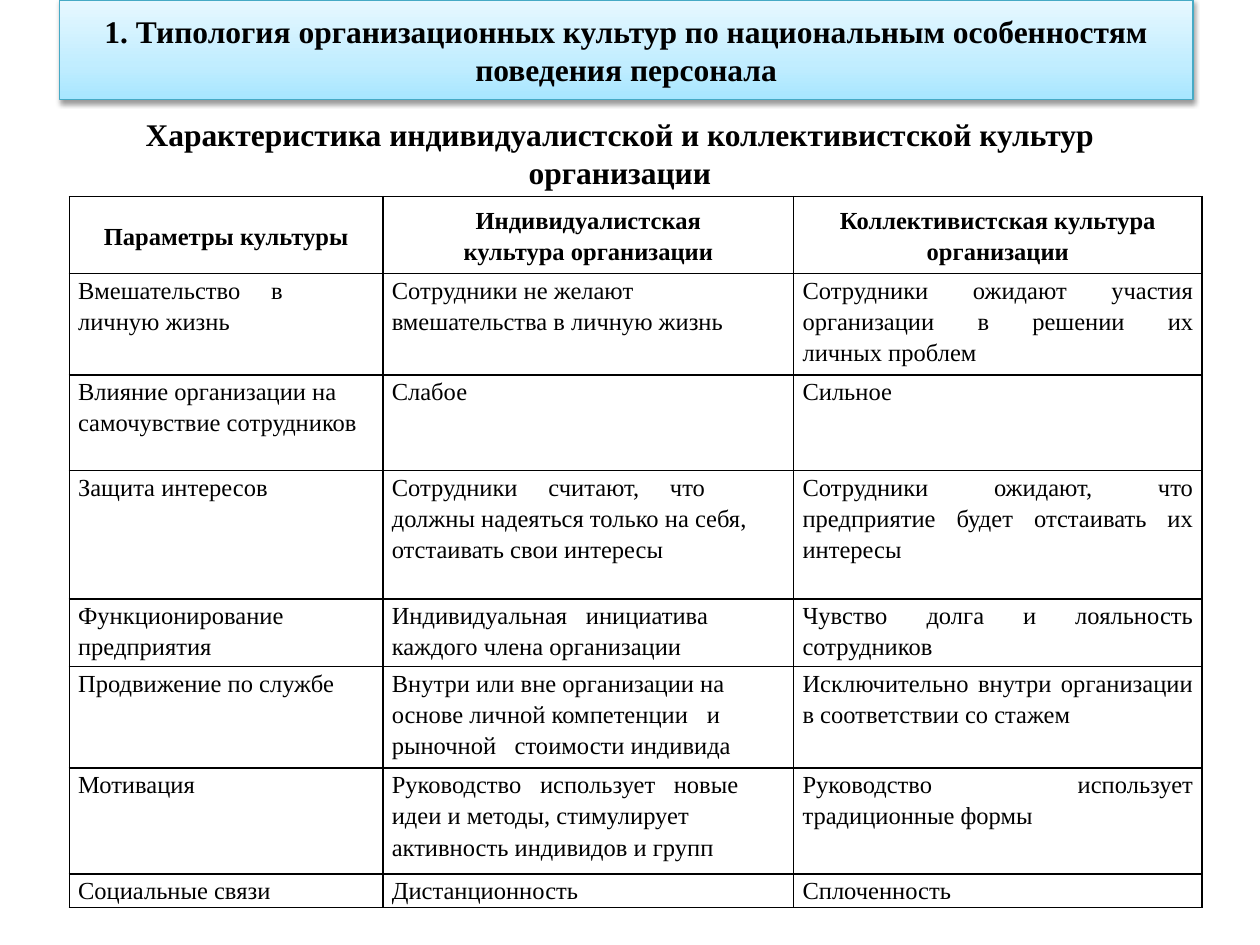
from copy import deepcopy
from dataclasses import dataclass

from lxml import etree
from pptx import Presentation
from pptx import util as u
from pptx.dml.color import RGBColor
from pptx.enum import text
from pptx.enum.shapes import MSO_SHAPE
from pptx.oxml.ns import qn


@dataclass(frozen=True)
class Theme:
    font: str = "Times New Roman"
    ink: str = "000000"
    banner_line: str = "46AAC5"
    banner_stops: tuple = ((0, "A7E6FF"), (0.35, "C1EDFF"), (1, "E7F8FF"))
    heading_size: int = 18
    table_size: int = 14
    table_leading: float = 1.15


THEME = Theme()
CENTER, JUSTIFY, LEFT = (
    text.PP_ALIGN.CENTER, text.PP_ALIGN.JUSTIFY, text.PP_ALIGN.LEFT)
GAP_MARKS = {"_": 14, "^": 7}
COLUMN_WIDTHS = (2.49, 3.26, 3.24)
ROW_HEIGHTS = (0.61, 0.76, 0.76, 1.02, 0.51, 0.76, 0.84, 0.25)
ROWS = (
    (("Параметры культуры",),
     ("Индивидуалистская", "культура организации"),
     ("Коллективистская культура организации",)),
    (("Вмешательство_в_личную жизнь",),
     ("Сотрудники не желают вмешательства в личную жизнь",),
     ("Сотрудники ожидают участия организации^в^решении^их личных проблем",)),
    (("Влияние организации на самочувствие сотрудников",),
     ("Слабое",),
     ("Сильное",)),
    (("Защита интересов",),
     ("Сотрудники_считают,_что должны надеяться только на себя, "
      "отстаивать свои интересы",),
     ("Сотрудники ожидают, что предприятие будет отстаивать их интересы",)),
    (("Функционирование^предприятия",),
     ("Индивидуальная^инициатива каждого члена организации",),
     ("Чувство долга и лояльность сотрудников",)),
    (("Продвижение по службе",),
     ("Внутри или вне организации на основе личной "
      "компетенции^и^рыночной^стоимости индивида",),
     ("Исключительно внутри организации в соответствии со стажем",)),
    (("Мотивация",),
     ("Руководство^использует^новые идеи и методы, стимулирует "
      "активность индивидов и групп",),
     ("Руководство использует традиционные формы",)),
    (("Социальные связи",), ("Дистанционность",), ("Сплоченность",)),
)


def add_run(paragraph, words, size, bold, spacing=0):
    run = paragraph.add_run()
    run.text = words
    run.font.name = THEME.font
    run.font.size = u.Pt(size)
    run.font.bold = bold
    run.font.color.rgb = RGBColor.from_string(THEME.ink)
    if spacing:
        run.font._element.set("spc", str(spacing * 100))


def add_spaced_text(paragraph, line, size, bold):
    words = ""
    for character in line:
        if character in GAP_MARKS:
            add_run(paragraph, words, size, bold)
            add_run(paragraph, " ", size, bold, GAP_MARKS[character])
            words = ""
        else:
            words += character
    add_run(paragraph, words, size, bold)


def fill_frame(frame, lines, size, bold, alignment, leading=None):
    frame.word_wrap = True
    for index, line in enumerate(lines):
        paragraph = frame.add_paragraph() if index else frame.paragraphs[0]
        paragraph.alignment = alignment
        if leading:
            paragraph.line_spacing = leading
        add_spaced_text(paragraph, line, size, bold)


def add_solid_fill(parent, color):
    solid = etree.SubElement(parent, qn("a:solidFill"))
    return etree.SubElement(solid, qn("a:srgbClr"), val=color)


def add_banner(slide, left, top, width, height):
    banner = slide.shapes.add_shape(
        MSO_SHAPE.RECTANGLE, left, top, width, height)
    banner.fill.gradient()
    banner.fill.gradient_angle = 90
    properties = banner._element.spPr
    stops = properties.find(".//" + qn("a:gsLst"))
    stops.insert(1, deepcopy(stops[0]))
    for stop, (position, color) in zip(
            banner.fill.gradient_stops, THEME.banner_stops):
        stop.position = position
        stop.color.rgb = RGBColor.from_string(color)
    banner.line.color.rgb = RGBColor.from_string(THEME.banner_line)
    banner.line.width = u.Pt(0.75)
    banner.shadow.inherit = False
    shadow = etree.SubElement(
        properties.find(qn("a:effectLst")), qn("a:outerShdw"),
        blurRad="40000", dist="20000", dir="5400000", rotWithShape="0")
    color = etree.SubElement(shadow, qn("a:srgbClr"), val=THEME.ink)
    etree.SubElement(color, qn("a:alpha"), val="38000")
    banner.text_frame.vertical_anchor = text.MSO_ANCHOR.MIDDLE
    fill_frame(
        banner.text_frame,
        ("1. Типология организационных культур по национальным "
         "особенностям поведения персонала",),
        THEME.heading_size, True, CENTER)


def add_subtitle(slide, left, top, width, height):
    subtitle = slide.shapes.add_textbox(left, top, width, height)
    frame = subtitle.text_frame
    frame.vertical_anchor = text.MSO_ANCHOR.MIDDLE
    fill_frame(
        frame,
        ("Характеристика индивидуалистской и коллективистской культур",
         "организации"),
        THEME.heading_size, True, CENTER)
    frame.auto_size = text.MSO_AUTO_SIZE.SHAPE_TO_FIT_TEXT


def set_borders(cell):
    properties = cell._tc.get_or_add_tcPr()
    for index, side in enumerate(("lnL", "lnR", "lnT", "lnB")):
        border = etree.Element(qn("a:" + side), w=str(u.Pt(1)))
        add_solid_fill(border, THEME.ink)
        properties.insert(index, border)


def style_cell(cell, lines, is_header, alignment):
    cell.fill.background()
    set_borders(cell)
    cell.margin_left = cell.margin_right = u.Inches(0.07)
    cell.margin_top = cell.margin_bottom = 0
    cell.vertical_anchor = (
        text.MSO_ANCHOR.MIDDLE if is_header else text.MSO_ANCHOR.TOP)
    fill_frame(cell.text_frame, lines, THEME.table_size, is_header,
               alignment, THEME.table_leading)


def add_culture_table(slide, left, top, width, height):
    table = slide.shapes.add_table(
        len(ROWS), len(COLUMN_WIDTHS), left, top, width, height).table
    table.first_row = table.horz_banding = False
    for column, column_width in zip(table.columns, COLUMN_WIDTHS):
        column.width = u.Inches(column_width)
    for row, row_height in zip(table.rows, ROW_HEIGHTS):
        row.height = u.Inches(row_height)
    for row_index, row in enumerate(ROWS):
        is_header = row_index == 0
        alignments = (CENTER,) * 3 if is_header else (LEFT, LEFT, JUSTIFY)
        for column_index, lines in enumerate(row):
            style_cell(table.cell(row_index, column_index), lines,
                       is_header, alignments[column_index])


def main():
    presentation = Presentation()
    presentation.slide_width = u.Inches(10)
    presentation.slide_height = u.Inches(7.5)
    slide = presentation.slides.add_slide(presentation.slide_layouts[6])
    add_banner(slide, u.Inches(0.47), 0, u.Inches(9), u.Inches(0.79))
    add_subtitle(slide, u.Inches(0.7), u.Inches(0.86),
                 u.Inches(8.44), u.Inches(0.71))
    add_culture_table(slide, u.Inches(0.55), u.Inches(1.56),
                      u.Inches(8.98), u.Inches(5.65))
    presentation.save("out.pptx")


if __name__ == "__main__":
    main()
